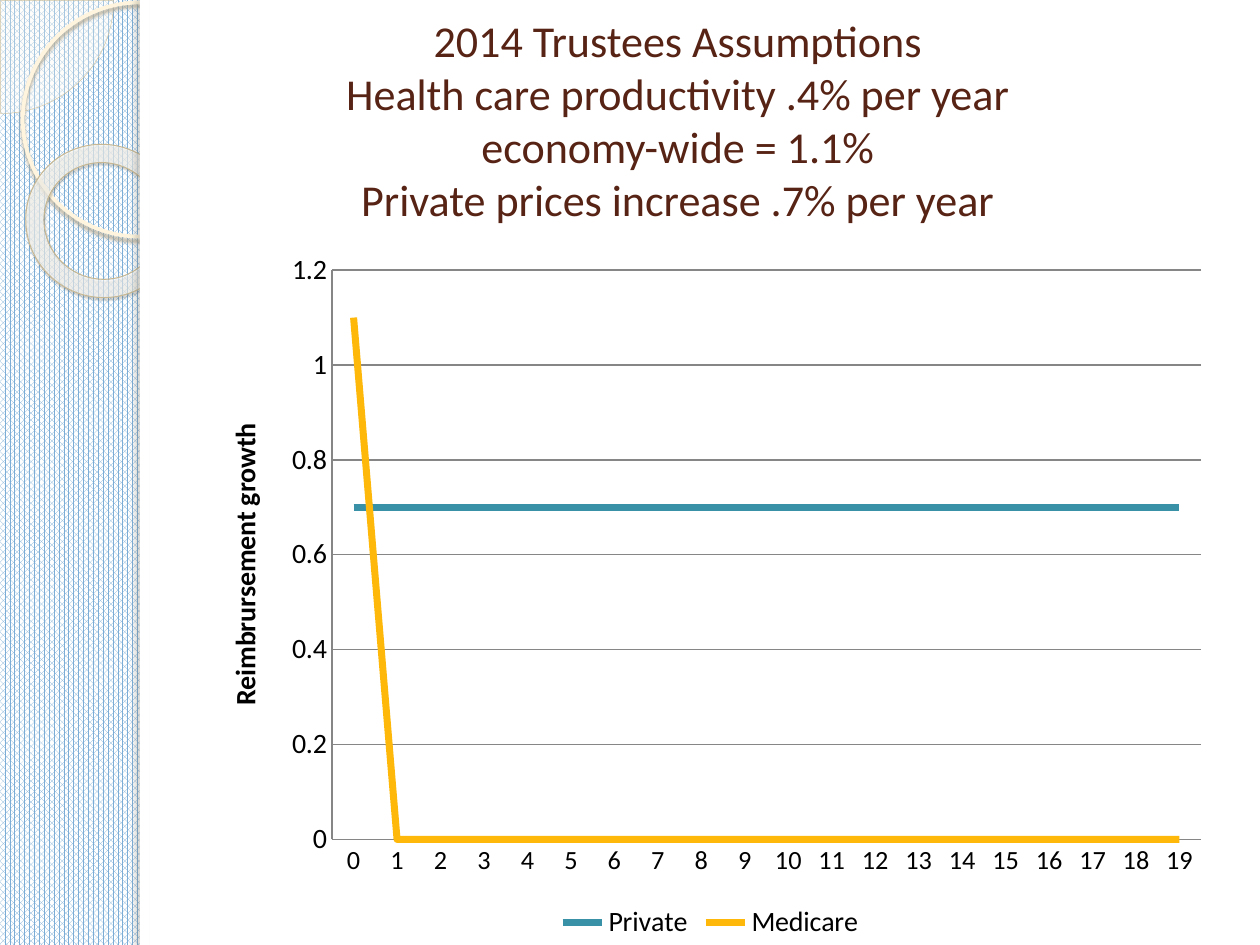
from lxml import etree
from pptx import Presentation
from pptx import util as u
from pptx.chart import data
from pptx.dml.color import RGBColor
from pptx.enum import chart as ch
from pptx.enum import dml, shapes, text
from pptx.oxml import parse_xml
from pptx.oxml.ns import qn

NS = 'xmlns:a="http://schemas.openxmlformats.org/drawingml/2006/main"'
HUES = {
    "stripe": "7CADD6", "white": "FFFFFF", "pie": "FEFAF4", "rim": "D3C39F",
    "ring": "FFF5DE", "ringshade": "B0A68F", "donut": "C7B893",
    "donutshade": "5A5444", "edgeshade": "736F63", "title": "572314",
    "black": "000000", "grid": "868686", "Private": "3891A7", "Medicare": "FEB80A",
}


def rgb(name):
    return RGBColor.from_string(HUES[name])


def put(words, font, size, color="black", bold=False, frame=None):
    """Format a font, first writing words into frame when one is given."""
    if frame is not None:
        para = frame.paragraphs[0]
        para.text = words
        para.alignment = text.PP_ALIGN.CENTER
        font = para.font if font is None else font
        fonts = [font] + [run.font for run in para.runs]
    else:
        fonts = [font]
    for item in fonts:
        item.name, item.size, item.bold = "Calibri", u.Pt(size), bold
        item.color.rgb = rgb(color)


deck = Presentation()
deck.slide_width, deck.slide_height = u.Cm(25.4), u.Cm(19.05)
slide = deck.slides.add_slide(deck.slide_layouts[6])
back = slide.background.fill
back.patterned()
back.pattern = dml.MSO_PATTERN.PERCENT_75
back.fore_color.rgb, back.back_color.rgb = rgb("stripe"), rgb("white")

# Side ornament and white panel: kind, box, fill, line, shadow
# (a shadow is colour, opacity %, blur pt, distance pt, angle)
kind = shapes.MSO_SHAPE
parts = {}
for name, form, box, fill, line, shade in [
    ("pie", kind.PIE, (-2.26, -2.26, 4.55, 4.55), "pie", ("rim", 0.25), None),
    ("ring", kind.OVAL, (0.46, 0.05, 4.72, 4.72), None, ("ring", 2.15),
     ("ringshade", 85, 2, 2, 90)),
    ("donut", kind.DONUT, (0.51, 2.92, 3.12, 3.07), None, ("donut", 0.58),
     ("donutshade", 35, 1, 1.2, 75)),
    ("panel", kind.RECTANGLE, (2.82, 0, 22.58, 19.05), "white", None, None),
    ("edge", kind.RECTANGLE, (2.82, 0, 0.2, 19.05), "white", None,
     ("edgeshade", 25, 3, 3, 180)),
]:
    part = parts[name] = slide.shapes.add_shape(form, *[u.Cm(n) for n in box])
    part.shadow.inherit = False
    if fill:
        part.fill.solid()
        part.fill.fore_color.rgb = rgb(fill)
    else:
        part.fill.background()
    if line:
        part.line.color.rgb, part.line.width = rgb(line[0]), u.Pt(line[1])
    else:
        part.line.fill.background()
    if shade:
        hue, clear, blur, dist, turn = shade
        part.element.spPr.find(qn("a:effectLst")).append(parse_xml(
            f'<a:outerShdw {NS} blurRad="{u.Pt(blur)}" dist="{u.Pt(dist)}" '
            f'dir="{turn * 60000}" algn="tl" rotWithShape="0">'
            f'<a:srgbClr val="{HUES[hue]}"><a:alpha val="{clear * 1000}"/>'
            '</a:srgbClr></a:outerShdw>'))

pie, donut = parts["pie"], parts["donut"]
pie.adjustments[0], pie.adjustments[1] = 0, 54.02
tint = pie.element.spPr.find(qn("a:solidFill"))[0]
etree.SubElement(tint, qn("a:alpha")).set("val", "33000")
donut.rotation = 38.6
donut.adjustments[0] = 0.12
stops = "".join(
    f'<a:gs pos="{pos * 1000}"><a:srgbClr val="{hue}">'
    f'<a:alpha val="{clear * 1000}"/></a:srgbClr></a:gs>'
    for pos, hue, clear in [(0, "FFFCF6", 70), (70, "FFFEFB", 55), (100, "F0D28E", 60)])
blank = donut.element.spPr.find(qn("a:noFill"))
donut.element.spPr.replace(blank, parse_xml(
    f'<a:gradFill {NS} rotWithShape="1"><a:gsLst>{stops}</a:gsLst><a:path path="circle">'
    '<a:fillToRect l="-408000" t="-50000" r="508000" b="150000"/></a:path></a:gradFill>'))

# Title
title = slide.shapes.add_textbox(u.Cm(2.97), u.Cm(0.71), u.Cm(21.39), u.Cm(3.38))
frame = title.text_frame
frame.word_wrap = True
frame.vertical_anchor = text.MSO_ANCHOR.MIDDLE
put("2014 Trustees Assumptions\vHealth care productivity .4% per year\v"
    "economy-wide = 1.1%\vPrivate prices increase .7% per year",
    None, 25.2, color="title", frame=frame)

# Chart
years = 20
table = data.CategoryChartData()
table.categories = [str(n) for n in range(years)]
table.add_series("Private", [0.7] * years)
table.add_series("Medicare", [1.1] + [0] * (years - 1))
chart = slide.shapes.add_chart(
    ch.XL_CHART_TYPE.LINE, u.Cm(4.01), u.Cm(4.88), u.Cm(20.62), u.Cm(14.17), table).chart
put("", chart.font, 10)
chart.has_title = False
chart.has_legend = True
chart.legend.position = ch.XL_LEGEND_POSITION.BOTTOM
chart.legend.include_in_layout = False
put("", chart.legend.font, 16)

plot = chart.plots[0]
plot.vary_by_categories = False
for line in plot.series:
    line.smooth = False
    line.marker.style = ch.XL_MARKER_STYLE.NONE
    line.format.line.color.rgb = rgb(line.name)
    line.format.line.width = u.Pt(4)

across, up = chart.category_axis, chart.value_axis
for axis, size in [(across, 15), (up, 16)]:
    axis.major_tick_mark = axis.minor_tick_mark = ch.XL_TICK_MARK.NONE
    axis.format.line.color.rgb = rgb("grid")
    put("", axis.tick_labels.font, size)
up.minimum_scale, up.maximum_scale, up.major_unit = 0, 1.2, 0.2
up.has_major_gridlines = True
up.major_gridlines.format.line.color.rgb = rgb("grid")
put("Reimbrursement growth", None, 16, bold=True, frame=up.axis_title.text_frame)

# Fixed inner plot area, as fractions of the chart
area = chart.element.find(".//" + qn("c:plotArea"))
old = area.find(qn("c:layout"))
if old is not None:
    area.remove(old)
layout = etree.Element(qn("c:layout"))
area.insert(0, layout)
manual = etree.SubElement(layout, qn("c:manualLayout"))
for tag, val in [("layoutTarget", "inner"), ("xMode", "edge"), ("yMode", "edge"),
                 ("x", 0.13), ("y", 0.04), ("w", 0.85), ("h", 0.81)]:
    etree.SubElement(manual, qn("c:" + tag)).set("val", str(val))

deck.save("out.pptx")
